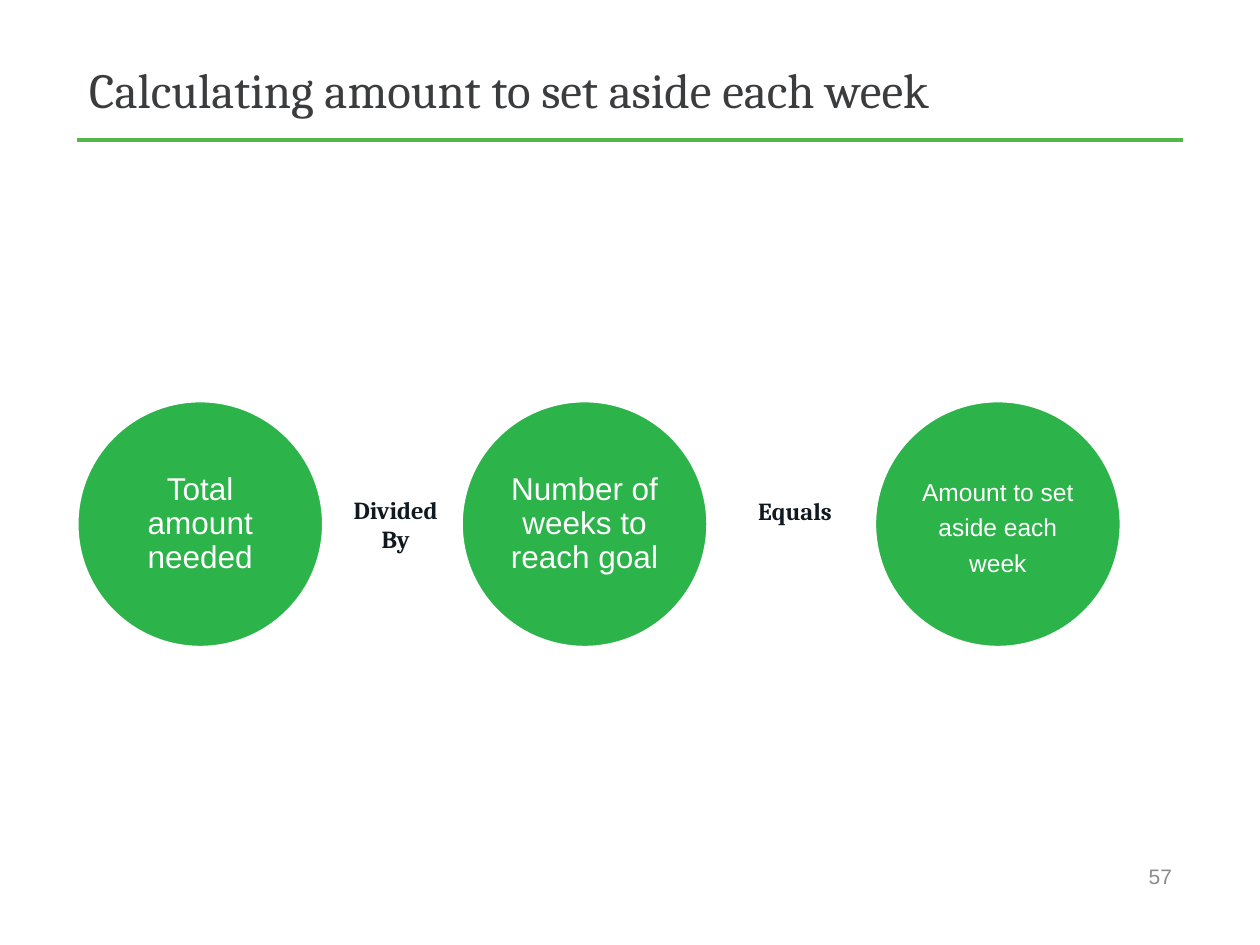
from lxml import etree
from pptx import Presentation
from pptx.dml.color import RGBColor
from pptx.enum.shapes import MSO_CONNECTOR, MSO_SHAPE
from pptx.enum.text import MSO_ANCHOR, PP_ALIGN
from pptx.oxml.ns import qn
from pptx.util import Inches, Pt

LEFT, CENTER, RIGHT = PP_ALIGN.LEFT, PP_ALIGN.CENTER, PP_ALIGN.RIGHT
TOP, MIDDLE = MSO_ANCHOR.TOP, MSO_ANCHOR.MIDDLE
OVAL, STRAIGHT = MSO_SHAPE.OVAL, MSO_CONNECTOR.STRAIGHT


def color(code):
    return RGBColor.from_string(code)


class Deck:
    serif, sans = "Cambria", "Arial"
    white, ink, gray = "FFFFFF", "101820", "8A8B8C"
    head, rule, green = "3B3C3E", "50B748", "2CB34A"

    def __init__(self, slide):
        self.shapes = slide.shapes

    def put(self, shape, words, font, size, shade,
            align=CENTER, anchor=MIDDLE, bold=False):
        frame = shape.text_frame
        frame.word_wrap = True
        frame.vertical_anchor = anchor
        para = frame.paragraphs[0]
        para.text = words
        para.alignment = align
        para.font.name = font
        para.font.size = Pt(size)
        para.font.bold = bold
        para.font.color.rgb = color(shade)
        return para

    def text(self, box, words, *style, **extra):
        shape = self.shapes.add_textbox(*map(Inches, box))
        self.put(shape, words, *style, **extra)

    def line(self, x1, x2, y):
        line = self.shapes.add_connector(
            STRAIGHT, Inches(x1), Inches(y), Inches(x2), Inches(y))
        line.line.color.rgb = color(self.rule)
        line.line.width = Pt(2)
        etree.SubElement(line._element.spPr, qn("a:effectLst"))

    def disc(self, x, y, side, words, size, space, inset):
        disc = self.shapes.add_shape(
            OVAL, Inches(x), Inches(y), Inches(side), Inches(side))
        disc.shadow.inherit = False
        disc.fill.solid()
        disc.fill.fore_color.rgb = color(self.green)
        disc.line.color.rgb = color(self.white)
        disc.line.width = Pt(2)
        frame = disc.text_frame
        frame.margin_left = frame.margin_right = Inches(inset)
        frame.margin_top = frame.margin_bottom = Inches(inset)
        para = self.put(disc, words, self.sans, size, self.white)
        para.line_spacing = space

    def label(self, box, words):
        self.text(box, words, self.serif, 14, self.ink, anchor=TOP, bold=True)


def main():
    prs = Presentation()
    prs.slide_width, prs.slide_height = Inches(10), Inches(7.5)
    deck = Deck(prs.slides.add_slide(prs.slide_layouts[6]))

    # Title and rule
    deck.line(0.61, 9.39, 1.11)
    deck.text((0.61, 0.3, 8.79, 0.81),
              "Calculating amount to set aside each week",
              deck.serif, 28, deck.head, align=LEFT)

    # Terms of the equation
    terms = [
        (0.61, "Total amount needed", 18, 0.9, 0.03),
        (3.66, "Number of weeks to reach goal", 18, 0.9, 0.03),
        (6.94, "Amount to set aside each week", 14, 1.2, 0.02),
    ]
    for x, *term in terms:
        deck.disc(x, 3.18, 1.96, *term)

    # Operators between the terms
    deck.label((2.63, 3.88, 1.02, 0.57), "Divided By")
    deck.label((5.72, 3.89, 1.18, 0.34), "Equals")

    # Page number
    deck.text((6.23, 6.75, 3.17, 0.4), "57",
              deck.sans, 12, deck.gray, align=RIGHT)

    prs.save("out.pptx")


if __name__ == "__main__":
    main()
